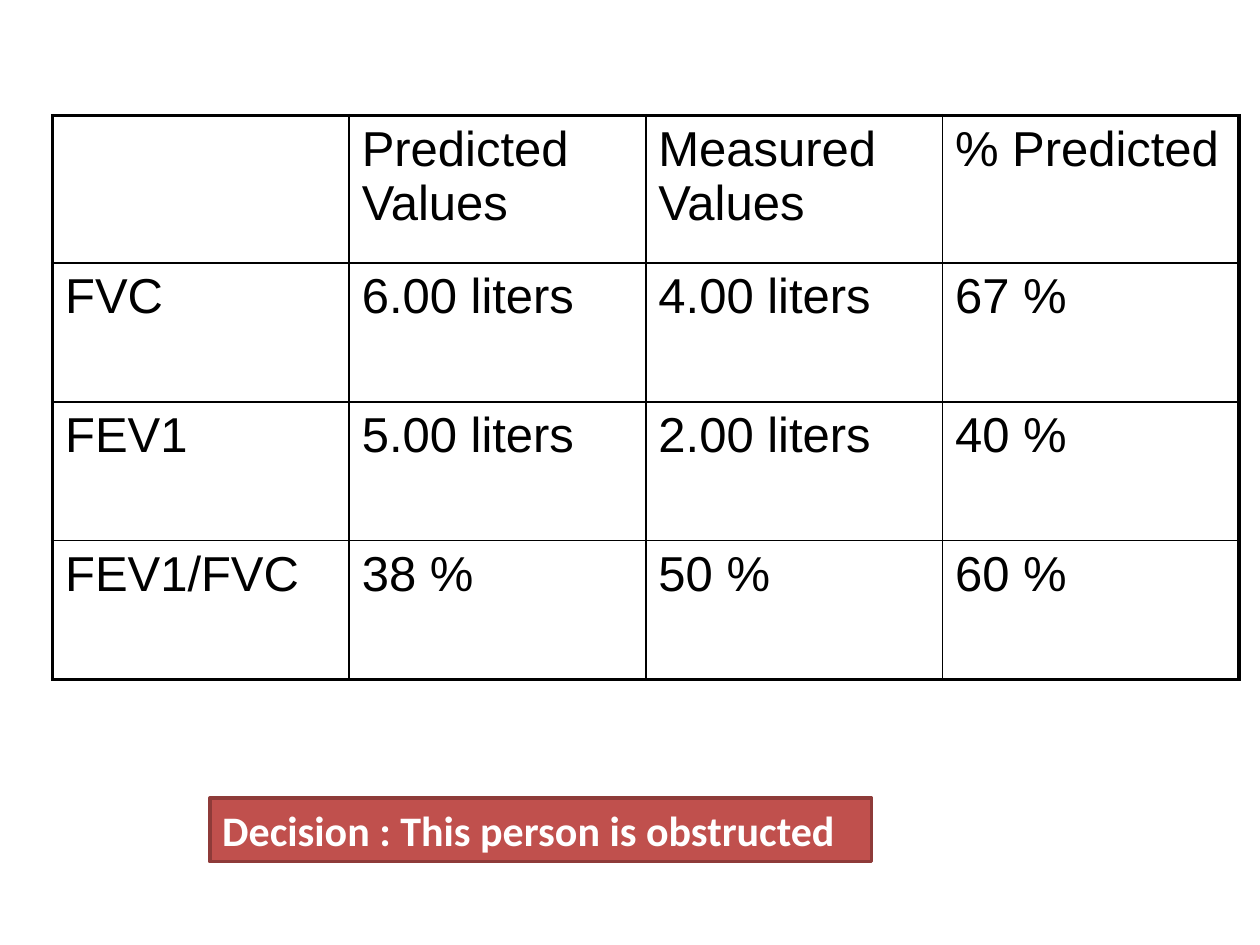
from dataclasses import dataclass

from lxml import etree
from pptx import Presentation
from pptx.dml.color import RGBColor
from pptx.enum import shapes, text
from pptx.oxml import ns
from pptx.util import Cm, Pt


@dataclass(frozen=True)
class Theme:
    ink: str = "000000"
    light: str = "FFFFFF"
    red: str = "C0504D"
    edge: str = "8E3B39"
    body: str = "Arial"
    label: str = "Calibri"
    cell: int = 28
    note: int = 24
    thin: float = 1
    thick: float = 2.25


def rgb(code):
    return RGBColor.from_string(code)


def write(frame, words, *, size, font, color, bold=False):
    para = frame.paragraphs[0]
    para.alignment = text.PP_ALIGN.LEFT
    para.font.size = Pt(size)
    if words:
        run = para.add_run()
        run.text = words
        run.font.size = Pt(size)
        run.font.name = font
        run.font.bold = bold
        run.font.color.rgb = rgb(color)


def rule(cell, side, width, color):
    """Draw one border of a cell; side is L, R, T or B."""
    line = etree.SubElement(cell._tc.get_or_add_tcPr(), ns.qn(f"a:ln{side}"),
                            w=str(Pt(width)))
    fill = etree.SubElement(line, ns.qn("a:solidFill"))
    etree.SubElement(fill, ns.qn("a:srgbClr"), val=color)


class Deck:
    def __init__(self, theme):
        self.theme = theme
        self.file = Presentation()
        self.file.slide_width, self.file.slide_height = Cm(25.4), Cm(19.05)
        self.slide = self.file.slides.add_slide(self.file.slide_layouts[6])

    def table(self, data, left, top, widths, heights):
        look = self.theme
        rows, cols = len(data), len(data[0])
        grid = self.slide.shapes.add_table(
            rows, cols, Cm(left), Cm(top), Cm(sum(widths)), Cm(sum(heights))).table
        grid.first_row = grid.horz_banding = False
        for col, width in zip(grid.columns, widths):
            col.width = Cm(width)
        for row, height in zip(grid.rows, heights):
            row.height = Cm(height)
        for r, line in enumerate(data):
            for c, words in enumerate(line):
                cell = grid.cell(r, c)
                outer = {"L": c == 0, "R": c == cols - 1,
                         "T": r == 0, "B": r == rows - 1}
                for side, thick in outer.items():
                    rule(cell, side, look.thick if thick else look.thin, look.ink)
                cell.fill.background()
                write(cell.text_frame, words, size=look.cell,
                      font=look.body, color=look.ink)

    def banner(self, words, left, top, width, height):
        look = self.theme
        box = self.slide.shapes.add_shape(
            shapes.MSO_SHAPE.RECTANGLE, Cm(left), Cm(top), Cm(width), Cm(height))
        box.shadow.inherit = False
        box.fill.solid()
        box.fill.fore_color.rgb = rgb(look.red)
        box.line.color.rgb = rgb(look.edge)
        box.line.width = Pt(2)
        frame = box.text_frame
        frame.word_wrap = True
        frame.auto_size = text.MSO_AUTO_SIZE.SHAPE_TO_FIT_TEXT
        frame.vertical_anchor = text.MSO_ANCHOR.TOP
        write(frame, words, size=look.note, font=look.label,
              color=look.light, bold=True)


def main():
    deck = Deck(Theme())
    values = [
        ["", "Predicted Values", "Measured Values", "% Predicted"],
        ["FVC", "6.00 liters", "4.00 liters", "67 %"],
        ["FEV1", "5.00 liters", "2.00 liters", "40 %"],
        ["FEV1/FVC", "38 %", "50 %", "60 %"],
    ]
    deck.table(values, 1.06, 2.33, [5.98] * 4, [2.97] + [2.8] * 3)
    deck.banner("Decision : This person is obstructed", 4.23, 16.09, 13.34, 1.28)
    deck.file.save("out.pptx")


if __name__ == "__main__":
    main()
